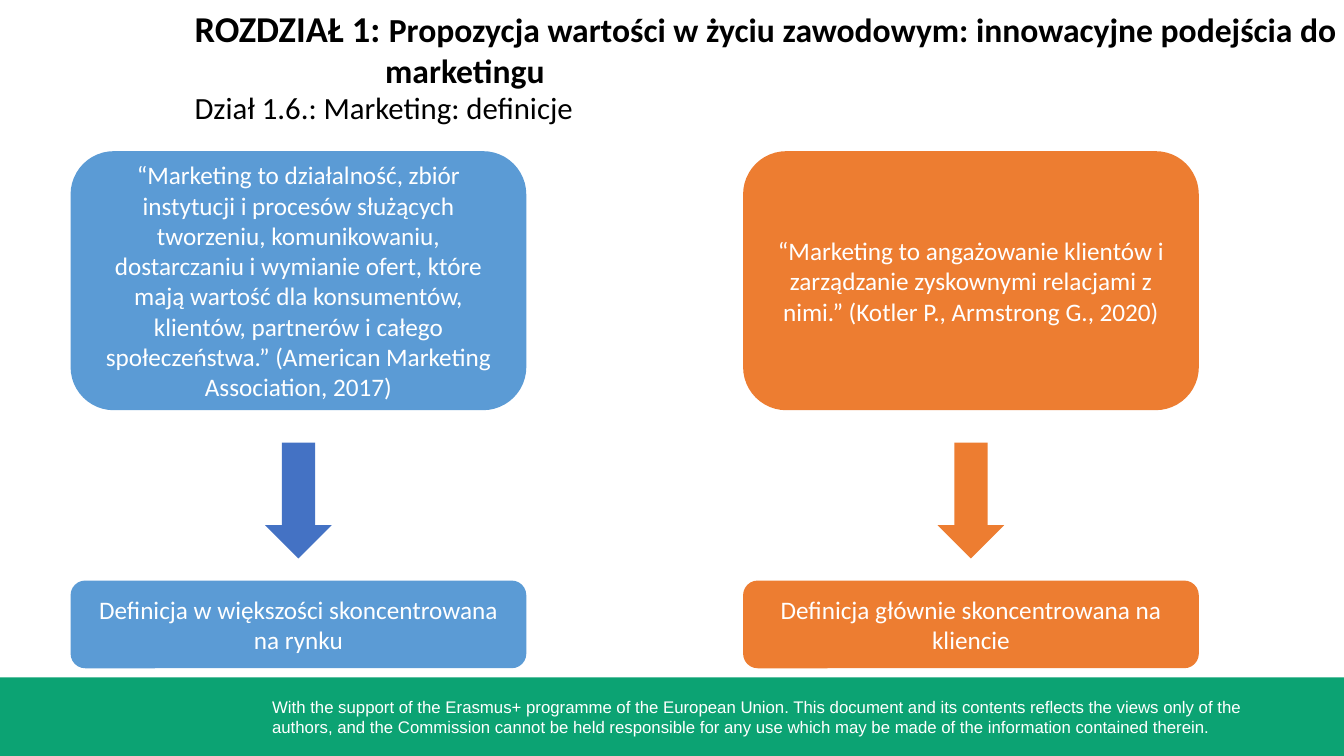
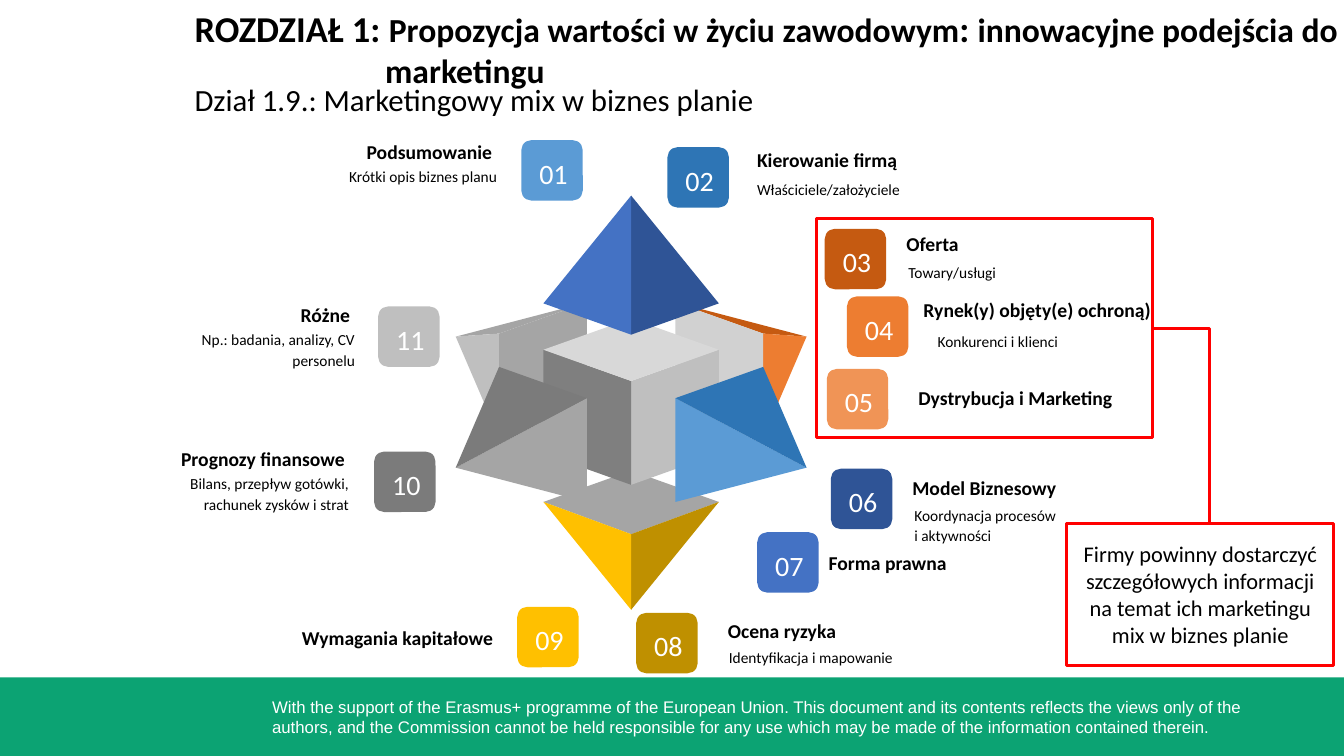
from pptx import Presentation
from pptx.dml.color import RGBColor
from pptx.enum.shapes import MSO_CONNECTOR as CONNECTOR, MSO_SHAPE as SHAPE
from pptx.enum.text import MSO_ANCHOR as ANCHOR, MSO_AUTO_SIZE as AUTO_SIZE, PP_ALIGN as ALIGN
from pptx.oxml import parse_xml
from pptx.oxml.ns import nsdecls, qn
from pptx.util import Inches, Pt

COLORS = {
    "black": "000000", "white": "FFFFFF", "green": "0CA373", "red": "FF0000",
    "sky": "5B9BD5", "ocean": "2E75B5", "blue": "4472C4", "navy": "2F5496",
    "peach": "F09456", "orange": "ED7D31", "rust": "C55A11",
    "gold": "FFC000", "bronze": "BF9000",
    "mist": "D8D8D8", "pearl": "D1D1D1", "silver": "BFBFBF",
    "gray": "A5A5A5", "iron": "7F7F7F", "slate": "7B7B7B",
}


def write(frame, lines, size=18, color="black", bold=False, font="Calibri", align=ALIGN.LEFT,
          anchor=ANCHOR.TOP, insets=(0.1, 0.05, 0.1, 0.05), spacing=None, indents=()):
    """Fill a text frame; each line is a string or a list of (text, size) spans."""
    frame.word_wrap = True
    frame.auto_size = AUTO_SIZE.NONE
    frame.vertical_anchor = anchor
    (frame.margin_left, frame.margin_top,
     frame.margin_right, frame.margin_bottom) = map(Inches, insets)
    for index, line in enumerate(lines):
        para = frame.add_paragraph() if index else frame.paragraphs[0]
        para.alignment = align
        para.line_spacing = spacing
        if index < len(indents):
            properties = para._p.get_or_add_pPr()
            properties.set("marL", str(Inches(indents[index])))
            properties.set("indent", "0")
        for text, points in [(line, size)] if isinstance(line, str) else line:
            span = para.add_run()
            span.text = text
            span.font.name = font
            span.font.size = Pt(points)
            span.font.bold = bold
            span.font.color.rgb = RGBColor.from_string(COLORS[color])


def add_box(page, at, lines=(), kind=None, fill=None, line=None, **text_format):
    """Add a preset shape, or a text box when no kind is given."""
    place = [Inches(length) for length in at]
    if kind is None:
        box = page.shapes.add_textbox(*place)
    else:
        box = page.shapes.add_shape(kind, *place)
        box.shadow.inherit = False
        if fill:
            box.fill.solid()
            box.fill.fore_color.rgb = RGBColor.from_string(COLORS[fill])
        else:
            box.fill.background()
        if line:
            box.line.color.rgb = RGBColor.from_string(COLORS[line])
            box.line.width = Pt(2.25)
        else:
            box.line.fill.background()
    if lines:
        write(box.text_frame, lines, **text_format)
    return box


deck = Presentation()
deck.slide_width = Inches(13.33)
deck.slide_height = Inches(7.5)
layout = deck.slide_layouts[5]

# Titles and section lines
CHAPTER = "ROZDZIAŁ 1: "
VALUE = "Propozycja wartości w życiu zawodowym"
APPROACH = "innowacyjne podejścia do"
HEADERS = [
    ([(CHAPTER, 26), (f"{VALUE}: {APPROACH}", 24)],
     "Dział 1.6.: Marketing: definicje", 0.86),
    ([(CHAPTER, 26), (VALUE, 24), (": ", 26), (APPROACH, 24)],
     "Dział 1.9.: Marketingowy mix w biznes planie", 0.78),
]
pages = []
for title_spans, section, section_top in HEADERS:
    page = deck.slides.add_slide(layout)
    title = page.shapes.title
    title.left, title.top = Inches(1.92), Inches(0.05)
    title.width, title.height = Inches(11.41), Inches(0.86)
    write(title.text_frame, [title_spans, "marketingu"], size=24, bold=True,
          insets=(0, 0.01, 0, 0), indents=(0.01, 1.9))
    add_box(page, (1.92, section_top, 10.44, 0.39), [section], size=22,
            insets=(0, 0.02, 0, 0), indents=(0.01,))
    pages.append(page)
definitions_page, mix_page = pages

# Footer band, kept on the layout so that every page shows it
band = add_box(definitions_page, (0, 6.72, 13.33, 0.78), kind=SHAPE.RECTANGLE, fill="green")
disclaimer = add_box(
    definitions_page, (2.6, 6.86, 10.42, 0.5),
    ["With the support of the Erasmus+ programme of the European Union. This document and its "
     "contents reflects the views only of the authors, and the Commission cannot be held "
     "responsible for any use which may be made of the information contained therein."],
    size=12, font="Arial", color="white")
for number, footer_part in enumerate((band, disclaimer), 20):
    footer_part.element.nvSpPr.cNvPr.set("id", str(number))
    layout.shapes.element.append(footer_part.element)

# Two definitions, each with an arrow to its focus
DEFINITIONS = [
    (0.7, "sky", "blue",
     "“Marketing to działalność, zbiór instytucji i procesów służących tworzeniu, komunikowaniu, "
     "dostarczaniu i wymianie ofert, które mają wartość dla konsumentów, klientów, partnerów i "
     "całego społeczeństwa.” (American Marketing Association, 2017)",
     "Definicja w większości skoncentrowana na rynku"),
    (7.37, "orange", "orange",
     "“Marketing to angażowanie klientów i zarządzanie zyskownymi relacjami z nimi.” "
     "(Kotler P., Armstrong G., 2020)",
     "Definicja głównie skoncentrowana na kliencie"),
]
COLUMN_WIDTH, ARROW_WIDTH = 4.52, 0.66
for left, fill, arrow_fill, definition, focus in DEFINITIONS:
    for top, height, text in ((1.5, 2.57, definition), (5.76, 0.87, focus)):
        # The inset makes room for the rounded corners
        inset = 0.1 + 0.05 * height
        add_box(definitions_page, (left, top, COLUMN_WIDTH, height), [text],
                kind=SHAPE.ROUNDED_RECTANGLE, fill=fill, color="white",
                align=ALIGN.CENTER, anchor=ANCHOR.MIDDLE)
    arrow_left = left + (COLUMN_WIDTH - ARROW_WIDTH) / 2
    add_box(definitions_page, (arrow_left, 4.39, ARROW_WIDTH, 1.15),
            kind=SHAPE.DOWN_ARROW, fill=arrow_fill)

# Crystal: right-hand facets from back to front, mirrored where a left colour is given
AXIS = 6.26
FACETS = [
    ([(8, 3.34), (6.7, 3), (7.57, 3.31)], "rust", "gray"),
    ([(7.57, 4.34), (8, 3.34), (7.57, 3.31)], "orange", "silver"),
    ([(7.57, 4.34), (7.57, 3.31), (6.7, 3), (6.7, 4.03)], "pearl", "gray"),
    ([(AXIS, 5.3), (5.39, 4.98), (AXIS, 4.67), (7.13, 4.98)], "gray", None),
    ([(AXIS, 6.05), (AXIS, 5.3), (7.13, 4.98)], "bronze", "gold"),
    ([(AXIS, 3.78), (AXIS, 4.81), (7.13, 4.5), (7.13, 3.47)], "silver", "iron"),
    ([(AXIS, 3.16), (5.39, 3.47), (AXIS, 3.78), (7.13, 3.47)], "mist", None),
    ([(AXIS, 1.94), (AXIS, 3.32), (7.13, 3.01)], "navy", "blue"),
    ([(8, 4.64), (6.7, 4.98), (6.7, 3.95)], "sky", "gray"),
    ([(7.57, 3.64), (8, 4.64), (6.7, 3.95)], "ocean", "slate"),
]
for corners, right_fill, left_fill in FACETS:
    mirrored = [(2 * AXIS - x, y) for x, y in corners]
    for outline, fill in ((corners, right_fill), (mirrored, left_fill)):
        if fill is None:
            continue
        points = [(Inches(x), Inches(y)) for x, y in outline]
        builder = mix_page.shapes.build_freeform(*points[0])
        builder.add_line_segments(points[1:], close=True)
        facet = builder.convert_to_shape()
        facet.shadow.inherit = False
        facet.fill.solid()
        facet.fill.fore_color.rgb = RGBColor.from_string(COLORS[fill])
        facet.line.fill.background()

# Plan parts: number, fill, badge left and top, heading, its outer edge and top,
# detail lines and their offset from the heading
PARTS = [
    ("01", "sky", 5.17, 1.39, "Podsumowanie", 4.98, 1.34,
     ["Krótki opis biznes planu"], 0.05, 0.25),
    ("02", "ocean", 6.62, 1.46, "Kierowanie firmą", 7.41, 1.42,
     ["Właściciele/założyciele"], 0, 0.3),
    ("03", "rust", 8.18, 2.27, "Oferta", 8.89, 2.25, ["Towary/usługi"], 0.02, 0.29),
    ("04", "orange", 8.4, 2.94, "Rynek(y) objęty(e) ochroną)", 9.06, 2.91,
     ["Konkurenci i klienci"], 0.14, 0.32),
    ("05", "peach", 8.2, 3.66, "Dystrybucja i Marketing", 9.01, 3.78, [], 0, 0),
    ("06", "navy", 8.24, 4.65, "Model Biznesowy", 8.95, 4.67,
     ["Koordynacja procesów", "i aktywności"], 0.02, 0.28),
    ("07", "blue", 7.51, 5.28, "Forma prawna", 8.12, 5.42, [], 0, 0),
    ("08", "bronze", 6.31, 6.08, "Ocena ryzyka", 7.12, 6.09,
     ["Identyfikacja i mapowanie"], 0.01, 0.27),
    ("09", "gold", 5.13, 6.02, "Wymagania kapitałowe", 4.99, 6.16, [], 0, 0),
    ("10", "slate", 3.71, 4.48, "Prognozy finansowe", 3.52, 4.38,
     ["Bilans, przepływ gotówki, rachunek zysków i strat"], 0.04, 0.26),
    ("11", "silver", 3.75, 3.04, "Różne", 3.57, 2.96,
     ["Np.: badania, analizy, CV personelu"], 0.05, 0.25),
]
HEADING_WIDTH, DETAIL_WIDTH = 2.55, 1.99
for number, fill, left, top, heading, edge, heading_top, details, shift, drop in PARTS:
    on_left = edge < AXIS
    align = ALIGN.RIGHT if on_left else ALIGN.LEFT
    add_box(mix_page, (left, top, 0.61, 0.6), [number], kind=SHAPE.ROUNDED_RECTANGLE,
            fill=fill, size=20, color="white", align=ALIGN.CENTER, anchor=ANCHOR.MIDDLE,
            insets=(0.03, 0.05, 0, 0))
    heading_left = edge - HEADING_WIDTH * on_left
    add_box(mix_page, (heading_left, heading_top, HEADING_WIDTH, 0.34), [heading],
            size=14, bold=True, align=align)
    if details:
        detail_left = edge + shift - DETAIL_WIDTH * on_left
        add_box(mix_page, (detail_left, heading_top + drop, DETAIL_WIDTH, 0.5), details,
                size=11, align=align, spacing=1.1)

# Marketing parts framed and joined to the advice
marketing_frame = add_box(mix_page, (8.1, 2.17, 3.33, 2.17), kind=SHAPE.RECTANGLE, line="red")
add_box(mix_page, (10.58, 5.19, 2.65, 1.41),
        ["Firmy powinny dostarczyć szczegółowych informacji na temat ich marketingu "
         "mix w biznes planie"],
        kind=SHAPE.RECTANGLE, line="red", size=16, align=ALIGN.CENTER, anchor=ANCHOR.MIDDLE)
elbow = mix_page.shapes.add_connector(
    CONNECTOR.ELBOW, Inches(11.43), Inches(3.26), Inches(12), Inches(5.18))
elbow.begin_connect(marketing_frame, 3)
elbow.line.color.rgb = RGBColor.from_string(COLORS["red"])
elbow.line.width = Pt(2.25)
elbow_properties = elbow.element.spPr
elbow_properties.find(qn("a:prstGeom")).set("prst", "bentConnector2")
elbow_properties.append(parse_xml(f"<a:effectLst {nsdecls('a')}/>"))

deck.save("out.pptx")
